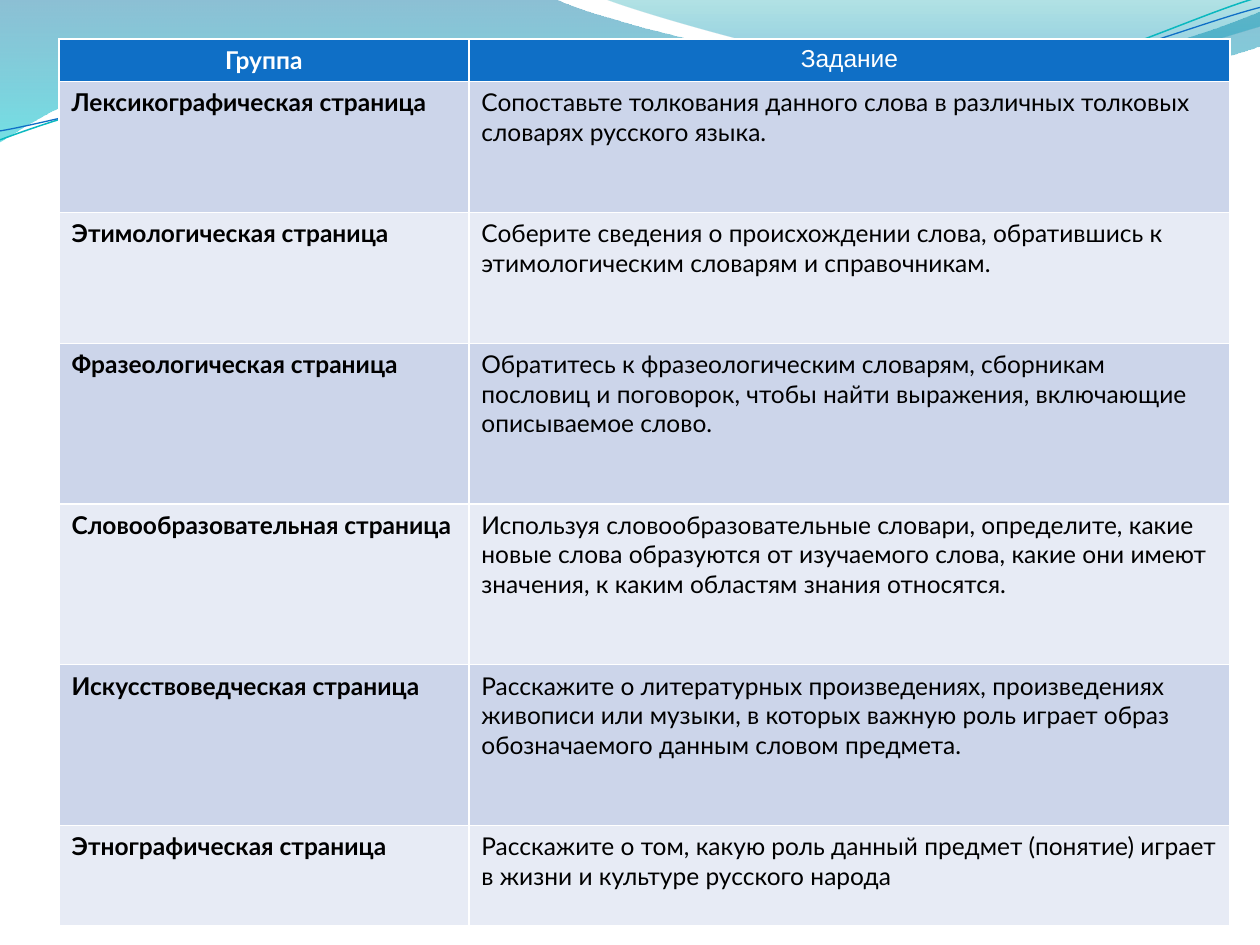
import pptx
import pptx.dml.color
import pptx.enum.text
import pptx.oxml
import pptx.oxml.ns
import pptx.util
from pptx.util import Cm

COLORS = {
    "header": "0F6FC6", "band": "CCD5EA", "light": "E7EBF5",
    "white": "FFFFFF", "black": "000000",
    "teal line": "0AB8BF", "blue line": "0F6FC6",
    "blue": "0074A1", "cyan": "00C6CF", "sea": "00A1A9", "sky": "008BBF",
}
NAMESPACE = pptx.oxml.ns.nsdecls("a")


def write(cell, text, font="Lato", color="black", bold=False, align="LEFT"):
    paragraph = cell.text_frame.paragraphs[0]
    paragraph.alignment = getattr(pptx.enum.text.PP_ALIGN, align)
    span = paragraph.add_run()
    span.text = text
    span.font.name = font
    span.font.size = pptx.util.Pt(14)
    span.font.bold = bold
    span.font.color.rgb = pptx.dml.color.RGBColor.from_string(COLORS[color])


def draw_outline(page, start, steps, close):
    """Draw steps in cm: two numbers are a straight line, six a Bezier curve."""
    builder = page.shapes.build_freeform(Cm(start[0]), Cm(start[1]), scale=1.0)
    builder.add_line_segments([(Cm(step[-2]), Cm(step[-1])) for step in steps], close=close)
    shape = builder.convert_to_shape()
    shape.shadow.inherit = False
    segments = list(shape._element.spPr.iter(pptx.oxml.ns.qn("a:lnTo")))
    for segment, step in zip(segments, steps):
        if len(step) == 6:
            points = "".join(
                f'<a:pt x="{Cm(x) - shape.left}" y="{Cm(y) - shape.top}"/>'
                for x, y in zip(step[::2], step[1::2]))
            curve = pptx.oxml.parse_xml(
                f"<a:cubicBezTo {NAMESPACE}>{points}</a:cubicBezTo>")
            segment.getparent().replace(segment, curve)
    return shape


deck = pptx.Presentation()
deck.slide_width, deck.slide_height = Cm(25.4), Cm(19.05)
page = deck.slides.add_slide(deck.slide_layouts[6])

# Waves: start, steps, gradient stops (position %, colour, opacity %)
waves = [
    ((0, -0.03),
     [(11.18, -0.03), (12.09, 0.43, 16.87, 1.6, 19.25, 1.6),
      (21.67, 1.6, 24.33, 0.66, 25.4, 0.23), (25.43, 0.91),
      (24.97, 1.12, 22.1, 1.93, 18.95, 1.91),
      (15.8, 1.91, 9.7, 0.71, 6.53, 0.86),
      (3.28, 0.89, 1.17, 2.11, -0.03, 2.87)],
     [(0, "blue", 45), (100, "cyan", 55)]),
    ((12.17, -0.03),
     [(12.93, 0.28, 17.32, 1.57, 19.53, 1.65),
      (21.74, 1.75, 24.41, 0.81, 25.4, 0.53), (25.4, 0)],
     [(0, "sea", 30), (80, "sky", 45)]),
]
for start, steps, stops in waves:
    wave = draw_outline(page, start, steps, close=True)
    wave.line.fill.background()
    stop_xml = "".join(
        f'<a:gs pos="{position * 1000}"><a:srgbClr val="{COLORS[color]}">'
        f'<a:alpha val="{opacity * 1000}"/></a:srgbClr></a:gs>'
        for position, color, opacity in stops)
    gradient = pptx.oxml.parse_xml(
        f'<a:gradFill {NAMESPACE} rotWithShape="1"><a:gsLst>{stop_xml}</a:gsLst>'
        '<a:lin ang="5400000" scaled="0"/></a:gradFill>')
    wave._element.spPr.find(pptx.oxml.ns.qn("a:custGeom")).addnext(gradient)

# Thin lines along the waves, given before their slight rotation
threads = [
    ((-0.05, 2.22),
     [(1.19, 1.82, 4.02, 1.04, 7.05, 1.05), (10.05, 1.07, 15.02, 2.37, 18.08, 2.28),
      (21.13, 2.2, 23.87, 0.91, 25.41, 0.55)], "teal line", 0.85),
    ((-0.04, 2.04),
     [(1.16, 1.9, 4.18, 1.15, 7.2, 1.16), (10.25, 1.18, 15.13, 2.23, 18.18, 2.17),
      (21.21, 2.1, 23.94, 1.06, 25.45, 0.75)], "blue line", 0.75),
]
for start, steps, color, width in threads:
    thread = draw_outline(page, start, steps, close=False)
    thread.rotation = 357.3
    thread.fill.background()
    thread.line.color.rgb = pptx.dml.color.RGBColor.from_string(COLORS[color])
    thread.line.width = pptx.util.Pt(width)

# Table of groups and their tasks
rows = [
    ("Группа", "Задание", 0.85),
    ("Лексикографическая страница",
     "Сопоставьте толкования данного слова в различных толковых словарях русского языка.", 2.64),
    ("Этимологическая страница",
     "Соберите сведения о происхождении слова, обратившись к этимологическим словарям "
     "и справочникам.", 2.64),
    ("Фразеологическая страница",
     "Обратитесь к фразеологическим словарям, сборникам пословиц и поговорок, чтобы найти "
     "выражения, включающие описываемое слово.", 3.24),
    ("Словообразовательная страница",
     "Используя словообразовательные словари, определите, какие новые слова образуются от "
     "изучаемого слова, какие они имеют значения, к каким областям знания относятся.", 3.24),
    ("Искусствоведческая страница",
     "Расскажите о литературных произведениях, произведениях живописи или музыки, в которых "
     "важную роль играет образ обозначаемого данным словом предмета.", 3.24),
    ("Этнографическая страница",
     "Расскажите о том, какую роль данный предмет (понятие) играет в жизни и культуре "
     "русского народа", 2.02),
]
widths = [8.26, 15.35]
frame = page.shapes.add_table(len(rows), len(widths), Cm(1.19), Cm(0.79),
                              Cm(sum(widths)), Cm(sum(row[2] for row in rows)))
table = frame.table
for column, width in zip(table.columns, widths):
    column.width = Cm(width)
for row_index, (group, task, height) in enumerate(rows):
    table.rows[row_index].height = Cm(height)
    is_header = row_index == 0
    fill = "header" if is_header else "band" if row_index % 2 else "light"
    for column_index, text in enumerate((group, task)):
        cell = table.cell(row_index, column_index)
        if is_header:
            write(cell, text, color="white", align="CENTER", bold=column_index == 0,
                  font=("Lato", "Arial")[column_index])
        else:
            write(cell, text, bold=column_index == 0)
        properties = cell._tc.get_or_add_tcPr()
        for side in ("lnL", "lnR", "lnT", "lnB"):
            properties.append(pptx.oxml.parse_xml(
                f'<a:{side} {NAMESPACE} w="{pptx.util.Pt(1)}"><a:solidFill>'
                f'<a:srgbClr val="{COLORS["white"]}"/></a:solidFill></a:{side}>'))
        cell.fill.solid()
        cell.fill.fore_color.rgb = pptx.dml.color.RGBColor.from_string(COLORS[fill])

deck.save("out.pptx")
